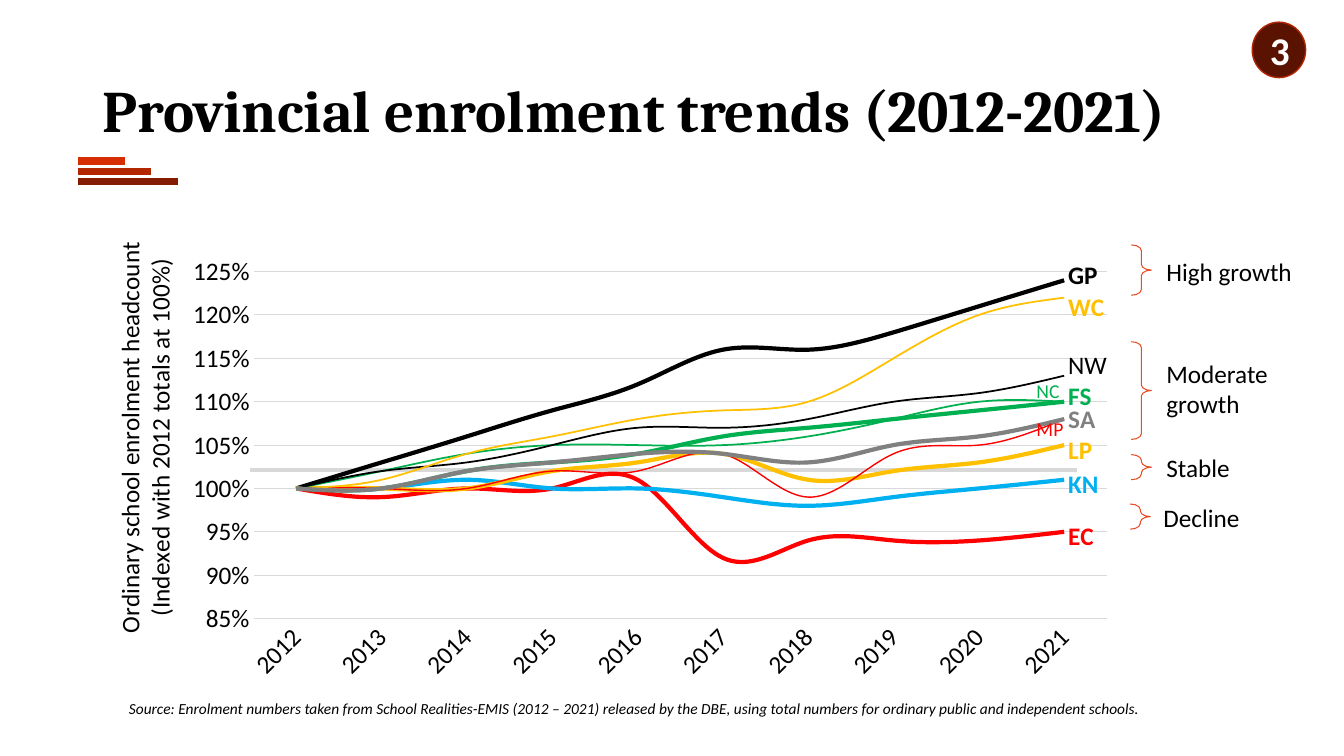
from lxml.etree import SubElement
from pptx import Presentation
from pptx.chart.data import CategoryChartData
from pptx.dml.color import RGBColor
from pptx.enum.chart import XL_CHART_TYPE, XL_LABEL_POSITION, XL_TICK_MARK
from pptx.enum.shapes import MSO_CONNECTOR, MSO_SHAPE
from pptx.enum.text import MSO_ANCHOR, PP_ALIGN
from pptx.oxml import parse_xml
from pptx.oxml.ns import nsdecls, qn
from pptx.util import Inches, Pt

YEARS = [str(year) for year in range(2012, 2022)]
PROVINCES = [
    ("EC", "FF0000", 3, 18, True, (0, 0.01), [1, 0.99, 1, 1, 1.01, 0.92, 0.94, 0.94, 0.94, 0.95]),
    ("FS", "00B050", 3, 18, True, (0, -0.01), [1, 1, 1.02, 1.03, 1.04, 1.06, 1.07, 1.08, 1.09, 1.1]),
    ("GP", "000000", 3, 18, True, (0, -0.01), [1, 1.03, 1.06, 1.09, 1.12, 1.16, 1.16, 1.18, 1.21, 1.24]),
    ("KN", "00B0F0", 3, 18, True, (0, 0.01), [1, 1, 1.01, 1, 1, 0.99, 0.98, 0.99, 1, 1.01]),
    ("LP", "FFC000", 3, 18, True, (0, 0.01), [1, 1, 1, 1.02, 1.03, 1.04, 1.01, 1.02, 1.03, 1.05]),
    ("MP", "FF0000", 1, 14, False, (-0.03, 0.02), [1, 1, 1, 1.02, 1.02, 1.04, 0.99, 1.04, 1.05, 1.08]),
    ("NC", "00B050", 1.25, 14, False, (-0.03, -0.02), [1, 1.02, 1.04, 1.05, 1.05, 1.05, 1.06, 1.08, 1.1, 1.1]),
    ("NW", "000000", 1.25, 18, False, (0, -0.02), [1, 1.02, 1.03, 1.05, 1.07, 1.07, 1.08, 1.1, 1.11, 1.13]),
    ("WC", "FFC000", 1.25, 18, True, (0, 0.02), [1, 1.01, 1.04, 1.06, 1.08, 1.09, 1.1, 1.15, 1.2, 1.22]),
    ("SA", "808080", 3, 18, True, (0, 0), [1, 1, 1.02, 1.03, 1.04, 1.04, 1.03, 1.05, 1.06, 1.08]),
]
GROWTH_BANDS = [
    ("High growth", 11.47, 2.36, 0.66, 11.22, 2.43, 0.5),
    ("Moderate growth", 11.47, 3.38, 0.95, 11.22, 3.39, 0.97),
    ("Stable", 11.47, 4.49, 0.3, 11.22, 4.51, 0.25),
    ("Decline", 11.44, 4.96, 0.34, 11.21, 5, 0.25),
]
BARS = [(1.8, 1.77, "851C00"), (1.7, 1.5, "B22600"), (1.6, 1.24, "D62E00")]


def rgb(value):
    return RGBColor.from_string(value)


def apply(target, formats):
    for name, value in formats.items():
        setattr(target, name, value)


def manual_layout(**settings):
    layout = parse_xml(f"<c:layout {nsdecls('c')}><c:manualLayout/></c:layout>")
    for name, value in settings.items():
        SubElement(layout[0], qn(f"c:{name}"), val=str(value))
    return layout


class TrendSlide:
    """Draws the enrolment slide's elements in one shared style."""

    font = "Calibri"
    grid = "D9D9D9"

    def __init__(self, slide):
        self.slide = slide

    def style_font(self, font, size, color="000000", **formats):
        apply(font, {"name": self.font, "size": Pt(size), "bold": False, **formats})
        font.color.rgb = rgb(color)

    def style_line(self, line, color, width):
        line.color.rgb = rgb(color)
        line.width = Pt(width)

    def fill_frame(self, frame, wording, size, color="000000", align=PP_ALIGN.LEFT, spacing=1, **formats):
        apply(frame, {"word_wrap": True, "vertical_anchor": MSO_ANCHOR.MIDDLE})
        paragraph = frame.paragraphs[0]
        apply(paragraph, {"alignment": align, "line_spacing": spacing})
        run = paragraph.add_run()
        run.text = wording
        self.style_font(run.font, size, color, **formats)

    def text(self, box, wording, size, **formats):
        frame = self.slide.shapes.add_textbox(*map(Inches, box)).text_frame
        self.fill_frame(frame, wording, size, **formats)

    def rule(self, left, right, top, color, width):
        rule = self.slide.shapes.add_connector(
            MSO_CONNECTOR.STRAIGHT, *map(Inches, (left, top, right, top)))
        self.style_line(rule.line, color, width)
        SubElement(rule._element.spPr, qn("a:effectLst"))

    def shape(self, kind, box, line, width, fill=None):
        shape = self.slide.shapes.add_shape(kind, *map(Inches, box))
        shape.shadow.inherit = False
        self.style_line(shape.line, line, width)
        if fill:
            shape.fill.solid()
            shape.fill.fore_color.rgb = rgb(fill)
        else:
            shape.fill.background()
        return shape

    def brace(self, box):
        self.shape(MSO_SHAPE.RIGHT_BRACE, box, "E84C22", 0.75).adjustments[0] = 0.28

    def chart(self, box):
        enrolment = CategoryChartData(number_format="0%")
        enrolment.categories = YEARS
        for name, *_, shares in PROVINCES:
            enrolment.add_series(name, shares)
        chart = self.slide.shapes.add_chart(
            XL_CHART_TYPE.LINE, *map(Inches, box), enrolment).chart
        apply(chart, {"has_legend": False, "has_title": False})
        self.style_font(chart.font, 18)
        chart.plots[0].vary_by_categories = False
        self.chart_axes(chart)
        for series, province in zip(chart.plots[0].series, PROVINCES):
            self.trend(series, *province[1:6])
        plot_area = chart._chartSpace.chart.plotArea
        for layout in plot_area.findall(qn("c:layout")):
            plot_area.remove(layout)
        plot_area.insert(0, manual_layout(
            layoutTarget="inner", xMode="edge", yMode="edge",
            x=0.175, y=0.134, w=0.803, h=0.683))
        chart._chartSpace.chart.addnext(parse_xml(
            f"<c:spPr {nsdecls('c', 'a')}><a:noFill/><a:ln><a:noFill/></a:ln></c:spPr>"))

    def chart_axes(self, chart):
        years, shares = chart.category_axis, chart.value_axis
        for axis in (years, shares):
            apply(axis, {"major_tick_mark": XL_TICK_MARK.NONE, "minor_tick_mark": XL_TICK_MARK.NONE})
            self.style_font(axis.tick_labels.font, 18)
        self.style_line(years.format.line, self.grid, 0.75)
        years._element.find(qn("c:txPr")).find(qn("a:bodyPr")).set("rot", "-2700000")
        apply(shares, {"minimum_scale": 0.85, "maximum_scale": 1.25, "major_unit": 0.05})
        apply(shares.tick_labels, {"number_format": "0%", "number_format_is_linked": False})
        shares.format.line.fill.background()
        self.style_line(shares.major_gridlines.format.line, self.grid, 0.75)
        frame = shares.axis_title.text_frame
        frame.text = "Ordinary school enrolment headcount\n(Indexed with 2012 totals at 100%)"
        for paragraph in frame.paragraphs:
            paragraph.alignment = PP_ALIGN.CENTER
            self.style_font(paragraph.runs[0].font, 18)
        frame._txBody.bodyPr.set("rot", "-5400000")
        title = shares._element.find(qn("c:title"))
        for layout in title.findall(qn("c:layout")):
            title.remove(layout)
        title.find(qn("c:tx")).addnext(
            manual_layout(xMode="edge", yMode="edge", x=0.04, y=0.07))

    def trend(self, series, color, width, size, bold, offset):
        series.smooth = True
        self.style_line(series.format.line, color, width)
        label = series.points[len(YEARS) - 1].data_label
        self.style_font(label.font, size, color, bold=bold)
        label.position = XL_LABEL_POSITION.RIGHT
        for flag in series._element.xpath(".//c:showVal"):
            flag.set("val", "0")
        for flag in series._element.xpath(".//c:dLbl/c:showSerName"):
            flag.set("val", "1")
        x, y = offset
        series._element.xpath(".//c:dLbl/c:idx")[0].addnext(manual_layout(x=x, y=y))


def main():
    deck = Presentation()
    apply(deck, {"slide_width": Inches(13.33), "slide_height": Inches(7.5)})
    page = TrendSlide(deck.slides.add_slide(deck.slide_layouts[6]))
    for top, right, color in BARS:
        page.rule(0.77, right, top, color, 5.5)
    page.rule(2.48, 10.68, 4.66, "D8D8D8", 3)
    page.text((0.92, 0.4, 11.5, 1.45), "Provincial enrolment trends (2012-2021)", 42,
              spacing=0.9, name="Cambria", bold=True)
    for band, left, top, height, brace_left, brace_top, brace_height in GROWTH_BANDS:
        page.text((left, top, 1.48, height), band, 18)
        page.brace((brace_left, brace_top, 0.2, brace_height))
    page.chart((0.67, 2.02, 10.54, 5.04))
    badge = page.shape(MSO_SHAPE.OVAL, (12.42, 0.22, 0.53, 0.55), "B22600", 1, "591300")
    page.fill_frame(badge.text_frame, "3", 28, color="FFFFFF", align=PP_ALIGN.CENTER, bold=True)
    page.text((1.18, 6.82, 11.01, 0.42),
              "Source: Enrolment numbers taken from School Realities-EMIS (2012 – 2021) released by "
              "the DBE, using total numbers for ordinary public and independent schools.",
              11, italic=True)
    deck.save("out.pptx")


if __name__ == "__main__":
    main()
